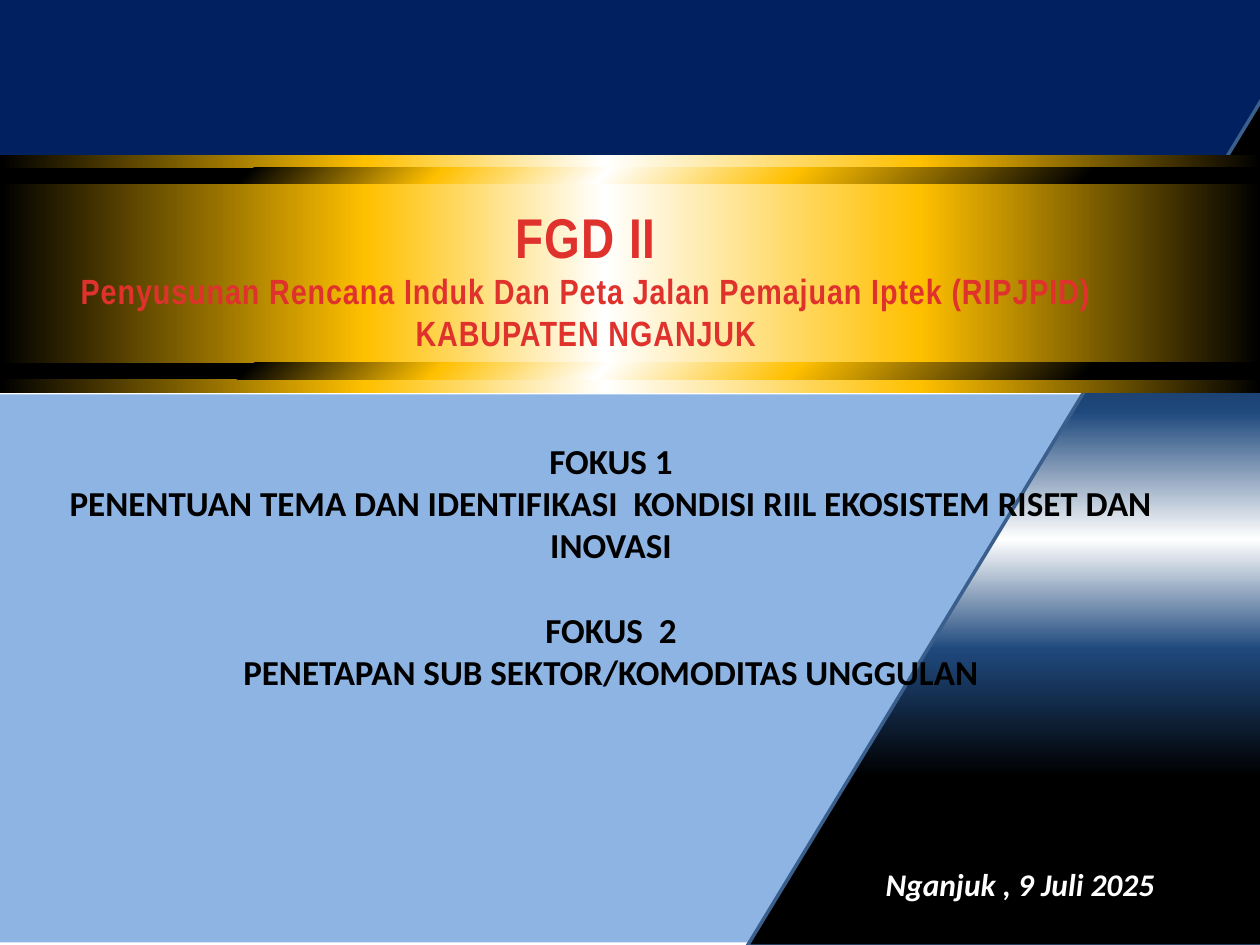
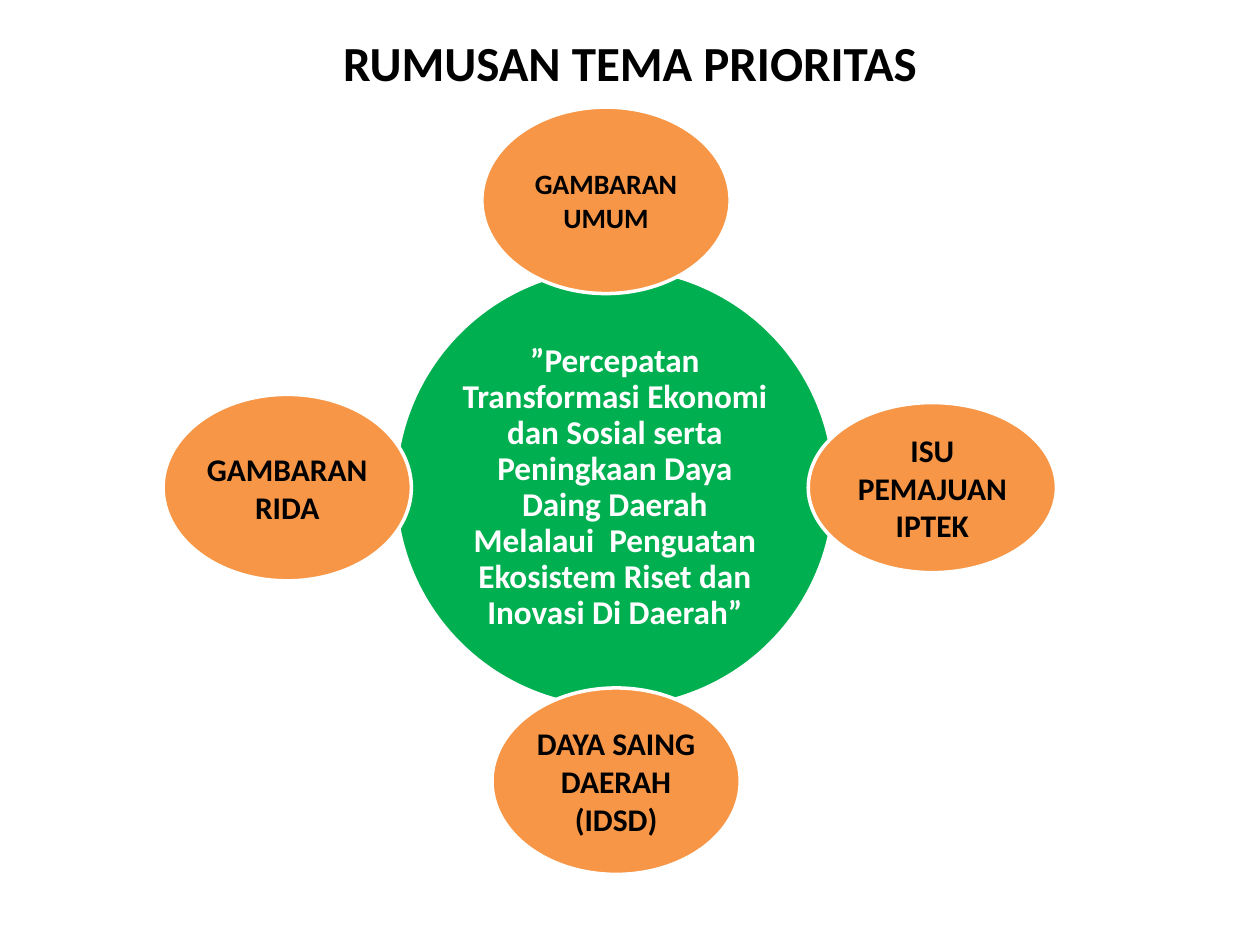
import pptx
import pptx.util
import pptx.dml.color
import pptx.enum.shapes
import pptx.enum.text
import pptx.oxml.ns
from lxml import etree

RGB = pptx.dml.color.RGBColor
SHAPE = pptx.enum.shapes.MSO_SHAPE
ALIGN = pptx.enum.text.PP_ALIGN
ANCHOR = pptx.enum.text.MSO_ANCHOR
Inch, Pt = pptx.util.Inches, pptx.util.Pt
qn = pptx.oxml.ns.qn

# Colours
NAVY, SKY, BLUE = RGB(0, 0x20, 0x60), RGB(0x8E, 0xB4, 0xE3), RGB(0x1F, 0x49, 0x7D)
EDGE, GOLD, RED = RGB(0x3A, 0x5F, 0x8C), RGB(0xFF, 0xC0, 0), RGB(0xE0, 0x32, 0x2D)
GREEN, ORANGE = RGB(0, 0xB0, 0x50), RGB(0xF7, 0x96, 0x46)
BLACK, WHITE = RGB(0, 0, 0), RGB(0xFF, 0xFF, 0xFF)

# Sizes in inches
WIDE, HIGH = 10, 7.5
HUB, HUB_SIZE = (4.88, 3.87), 3.49
NODE_WIDE = 1.97

# Gradients: stop shares and colours
SHARES = (20, 35, 48, 63, 86)


def sheen(tint):
    return list(zip(SHARES, (BLACK, tint, WHITE, tint, BLACK)))


BAND = list(zip((0, 29, 48, 73, 100), (BLACK, GOLD, WHITE, GOLD, BLACK)))

# Cover text: (text, size, space before)
HEAD = [
    ("FGD II", 32, 0),
    ("Penyusunan Rencana Induk Dan Peta Jalan Pemajuan Iptek (RIPJPID)", 20, 0),
    ("KABUPATEN NGANJUK", 20, 0),
]
FOCUS = [
    ("FOKUS 1", 20, 0),
    ("PENENTUAN TEMA DAN IDENTIFIKASI  KONDISI RIIL EKOSISTEM RISET DAN INOVASI", 20, 0),
    ("FOKUS  2", 20, 24.4),
    ("PENETAPAN SUB SEKTOR/KOMODITAS UNGGULAN", 20, 0),
]
DATE = [("Nganjuk , 9 Juli 2025", 18, 0)]

# Theme wheel
TITLE = [("RUMUSAN TEMA PRIORITAS", 28, 0)]
THEME = [("”Percepatan Transformasi Ekonomi dan Sosial serta Peningkaan Daya Daing "
          "Daerah Melalaui  Penguatan Ekosistem Riset dan Inovasi Di Daerah”", 19, 0)]
# Nodes: offset from the hub, height, lines, size
NODES = [
    (-0.07, -2.28, 1.48, ["GAMBARAN UMUM"], 16),
    (2.52, 0, 1.35, ["ISU PEMAJUAN IPTEK"], 18),
    (0.01, 2.33, 1.48, ["DAYA SAING DAERAH", "(IDSD)"], 18),
    (-2.6, 0, 1.48, ["GAMBARAN RIDA"], 18),
]


def blend(shape, stops, angle):
    """Fill a shape with a gradient of many stops."""
    shape.fill.gradient()
    grad = shape._element.spPr.find(qn("a:gradFill"))
    rows = grad.find(qn("a:gsLst"))
    for old in list(rows):
        rows.remove(old)
    for share, color in stops:
        stop = etree.SubElement(rows, qn("a:gs"), pos=str(share * 1000))
        etree.SubElement(stop, qn("a:srgbClr"), val=str(color))
    grad.find(qn("a:lin")).set("ang", str(angle * 60000))


def draw(slide, kind, box, fill, angle=0, line=None):
    shape = slide.shapes.add_shape(kind, *map(Inch, box))
    shape.shadow.inherit = False
    if isinstance(fill, list):
        blend(shape, fill, angle)
    else:
        shape.fill.solid()
        shape.fill.fore_color.rgb = fill
    if line is None:
        shape.line.fill.background()
    else:
        shape.line.color.rgb = line
        shape.line.width = Pt(2)
    return shape


def write(frame, lines, color, face="Calibri", align=ALIGN.CENTER):
    frame.word_wrap = True
    for i, (text, size, before) in enumerate(lines):
        para = frame.paragraphs[0] if i == 0 else frame.add_paragraph()
        para.text = text
        para.alignment = align
        para.space_before = Pt(before)
        font = para.font
        font.name, font.size, font.bold = face, Pt(size), True
        font.color.rgb = color
    return frame


def label(slide, box, lines, color, **style):
    area = slide.shapes.add_textbox(*map(Inch, box))
    return write(area.text_frame, lines, color, **style)


def disc(slide, mid, size, fill, lines, color):
    box = (mid[0] - size[0] / 2, mid[1] - size[1] / 2, *size)
    frame = draw(slide, SHAPE.OVAL, box, fill, line=WHITE).text_frame
    frame.margin_left = frame.margin_right = Inch(0.01)
    frame.margin_top = frame.margin_bottom = Inch(0.01)
    frame.vertical_anchor = ANCHOR.MIDDLE
    return write(frame, lines, color)


def cover(slide):
    # Background fields and corner
    draw(slide, SHAPE.RECTANGLE, (0, 0, WIDE, 1.92), NAVY)
    draw(slide, SHAPE.RECTANGLE, (0, 3.13, WIDE, 4.35), SKY)
    wedge = draw(slide, SHAPE.RIGHT_TRIANGLE, (5.93, 0.78, 4.09, 6.73),
                 sheen(BLUE), 270, EDGE)
    wedge._element.spPr.find(qn("a:xfrm")).set("flipH", "1")

    # Gold band with its heading and two stripes
    draw(slide, SHAPE.RECTANGLE, (0, 1.23, WIDE, 1.89), BAND)
    head = label(slide, (0.11, 1.56, 9.08, 1.31), HEAD, RED, face="Arial Narrow")
    for para in head.paragraphs:
        para.runs[0]._r.get_or_add_rPr().set("spc", "50")
    for top in (2.88, 1.33):
        draw(slide, SHAPE.RECTANGLE, (-0.03, top, WIDE + 0.03, 0.13), sheen(GOLD), 45)

    # Focus points and date
    label(slide, (-0.02, 3.44, 9.74, 2.12), FOCUS, BLACK)
    date = label(slide, (6.93, 6.82, 3.07, 0.4), DATE, WHITE, align=ALIGN.LEFT)
    date.paragraphs[0].font.italic = True


def wheel(slide):
    theme = disc(slide, HUB, (HUB_SIZE, HUB_SIZE), GREEN, THEME, WHITE)
    theme.paragraphs[0].line_spacing = 0.9
    for dx, dy, high, lines, size in NODES:
        disc(slide, (HUB[0] + dx, HUB[1] + dy), (NODE_WIDE, high), ORANGE,
             [(text, size, 0) for text in lines], BLACK)
    label(slide, (0.5, 0.21, 9.0, 0.57), TITLE, BLACK)


def main():
    deck = pptx.Presentation()
    deck.slide_width, deck.slide_height = Inch(WIDE), Inch(HIGH)
    for build in (cover, wheel):
        build(deck.slides.add_slide(deck.slide_layouts[6]))
    deck.save("out.pptx")


if __name__ == "__main__":
    main()
